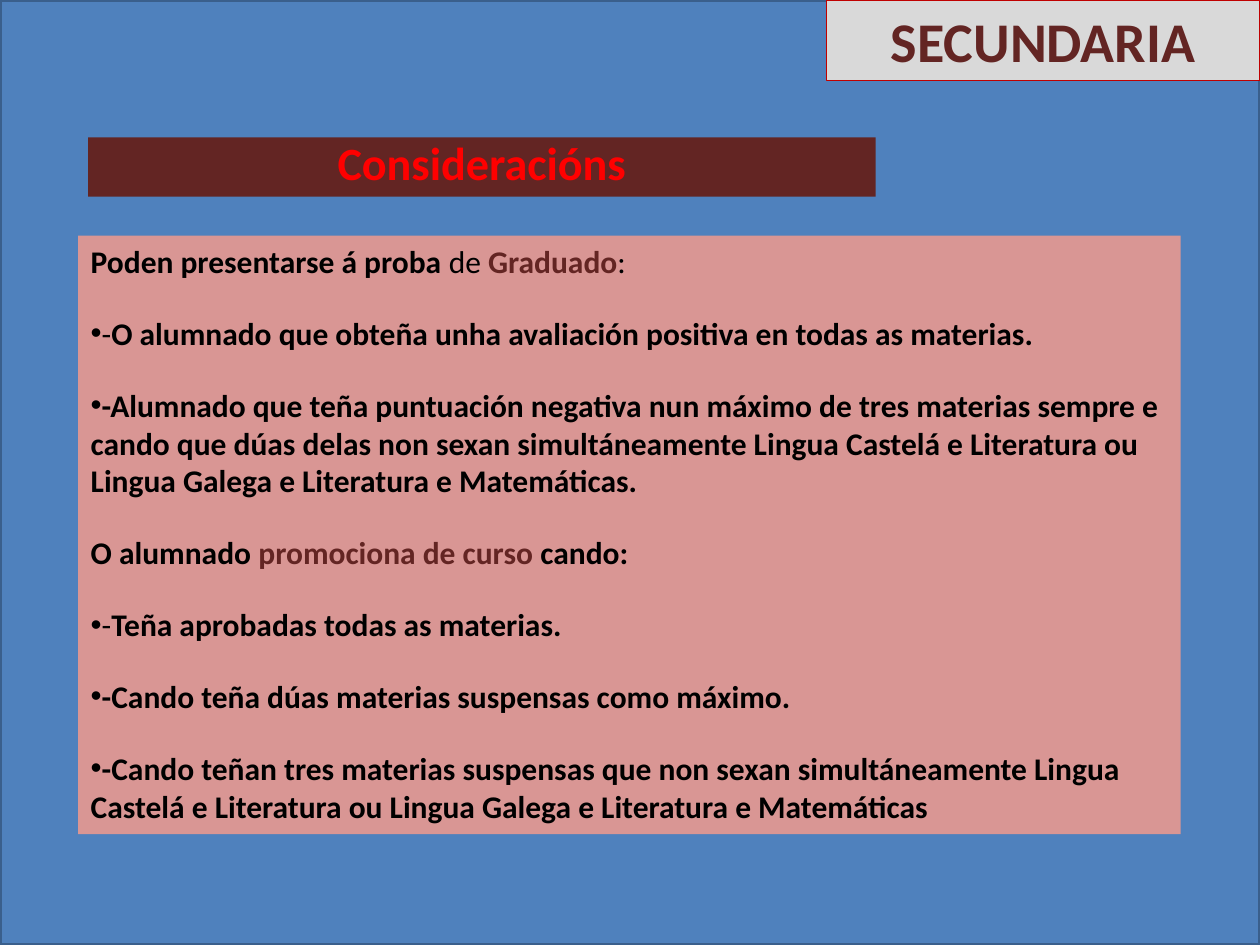
from dataclasses import dataclass

from lxml.etree import SubElement
from pptx import Presentation
from pptx.dml.color import RGBColor
from pptx.enum.shapes import MSO_SHAPE
from pptx.enum.text import MSO_ANCHOR, MSO_AUTO_SIZE, PP_ALIGN
from pptx.oxml import parse_xml
from pptx.oxml.ns import nsdecls, qn
from pptx.util import Inches, Pt


@dataclass(frozen=True)
class Theme:
    font: str = "Calibri"
    blue: str = "4F81BD"
    blue_edge: str = "3A5F8C"
    grey: str = "D9D9D9"
    red_edge: str = "C00000"
    maroon: str = "632523"
    rose: str = "D99694"
    red: str = "FF0000"
    glow: str = "DCE6F2"
    black: str = "000000"
    tag_size: float = 32
    title_size: float = 26.4
    body_size: float = 18
    gap: float = 19.5


THEME = Theme()
WIDTH, HEIGHT = Inches(10), Inches(7.5)

# Each paragraph: bulleted or not, then (text, bold, colour) spans.
PARAGRAPHS = [
    (False, [("Poden presentarse á proba ", True, THEME.black), ("de ", False, THEME.black),
             ("Graduado", True, THEME.maroon), (":", False, THEME.black)]),
    (True, [("-", False, THEME.black),
            ("O alumnado que obteña unha avaliación positiva en todas as materias.", True, THEME.black)]),
    (True, [("-Alumnado que teña puntuación negativa nun máximo de tres materias sempre e cando "
             "que dúas delas non sexan simultáneamente Lingua Castelá e Literatura ou Lingua "
             "Galega e Literatura e Matemáticas.", True, THEME.black)]),
    (False, [("O alumnado ", True, THEME.black), ("promociona de curso ", True, THEME.maroon),
             ("cando:", True, THEME.black)]),
    (True, [("-", False, THEME.black), ("Teña aprobadas todas as materias.", True, THEME.black)]),
    (True, [("-Cando teña dúas materias suspensas como máximo.", True, THEME.black)]),
    (True, [("-Cando teñan tres materias suspensas que non sexan simultáneamente Lingua Castelá "
             "e Literatura ou Lingua Galega e Literatura e Matemáticas", True, THEME.black)]),
]


def share(left, top, width, height):
    """Turn shares of the slide's size into a box of lengths."""
    return int(left * WIDTH), int(top * HEIGHT), int(width * WIDTH), int(height * HEIGHT)


def apply(target, values):
    for name, value in values.items():
        setattr(target, name, value)


def place(shape, box, fill):
    apply(shape, dict(zip(("left", "top", "width", "height"), box)))
    shape.fill.solid()
    shape.fill.fore_color.rgb = RGBColor.from_string(fill)


def format_frame(shape, anchor):
    apply(shape.text_frame, {"word_wrap": True, "auto_size": MSO_AUTO_SIZE.NONE,
                             "vertical_anchor": anchor})
    return shape.text_frame


def add_span(para, text, size, color, bold=True):
    span = para.add_run()
    span.text = text
    apply(span.font, {"name": THEME.font, "size": Pt(size), "bold": bold})
    span.font.color.rgb = RGBColor.from_string(color)
    return span


def add_panel(page, box, fill, edge, edge_width):
    panel = page.shapes.add_shape(MSO_SHAPE.RECTANGLE, *box)
    place(panel, box, fill)
    panel.shadow.inherit = False
    panel.line.color.rgb = RGBColor.from_string(edge)
    panel.line.width = Pt(edge_width)
    page.shapes.title.element.addprevious(panel.element)  # behind the placeholders
    return panel


def add_backdrop(page, box):
    add_panel(page, box, THEME.blue, THEME.blue_edge, 2)


def add_stage_tag(page, box):
    tag = add_panel(page, box, THEME.grey, THEME.red_edge, 0.75)
    para = format_frame(tag, MSO_ANCHOR.TOP).paragraphs[0]
    para.alignment = PP_ALIGN.CENTER
    add_span(para, "SECUNDARIA", THEME.tag_size, THEME.maroon)


def fill_title(title, box):
    place(title, box, THEME.maroon)
    para = format_frame(title, MSO_ANCHOR.MIDDLE).paragraphs[0]
    apply(para, {"alignment": PP_ALIGN.CENTER, "line_spacing": 0.8})
    span = add_span(para, "Consideracións", THEME.title_size, THEME.red)
    outline = parse_xml(f'<a:ln {nsdecls("a")} w="{Pt(0.75)}"><a:solidFill>'
                        f'<a:srgbClr val="{THEME.glow}"/></a:solidFill></a:ln>')
    span.font._element.insert(0, outline)


def set_bullet(para, bulleted):
    props = para._p.get_or_add_pPr()
    props.set("marL", "0")
    props.set("indent", "0")
    if bulleted:
        SubElement(props, qn("a:buFont"), typeface="Arial")
        SubElement(props, qn("a:buChar"), char="•")
    else:
        SubElement(props, qn("a:buNone"))


def fill_body(body, box):
    place(body, box, THEME.rose)
    frame = format_frame(body, MSO_ANCHOR.TOP)
    for index, (bulleted, spans) in enumerate(PARAGRAPHS):
        para = frame.add_paragraph() if index else frame.paragraphs[0]
        apply(para, {"alignment": PP_ALIGN.LEFT, "line_spacing": 1.0,
                     "space_before": Pt(THEME.gap if index else 0)})
        set_bullet(para, bulleted)
        for text, bold, color in spans:
            add_span(para, text, THEME.body_size, color, bold)


def main():
    deck = Presentation()
    apply(deck, {"slide_width": WIDTH, "slide_height": HEIGHT})
    page = deck.slides.add_slide(deck.slide_layouts[1])
    add_backdrop(page, share(0, 0, 1, 1))
    add_stage_tag(page, (Inches(6.56), 0, WIDTH - Inches(6.56), Inches(0.64)))
    fill_title(page.shapes.title, (Inches(0.7), Inches(1.09), Inches(6.25), Inches(0.47)))
    fill_body(page.placeholders[1], (Inches(0.62), Inches(1.87), Inches(8.75), Inches(4.75)))
    deck.save("out.pptx")


if __name__ == "__main__":
    main()
